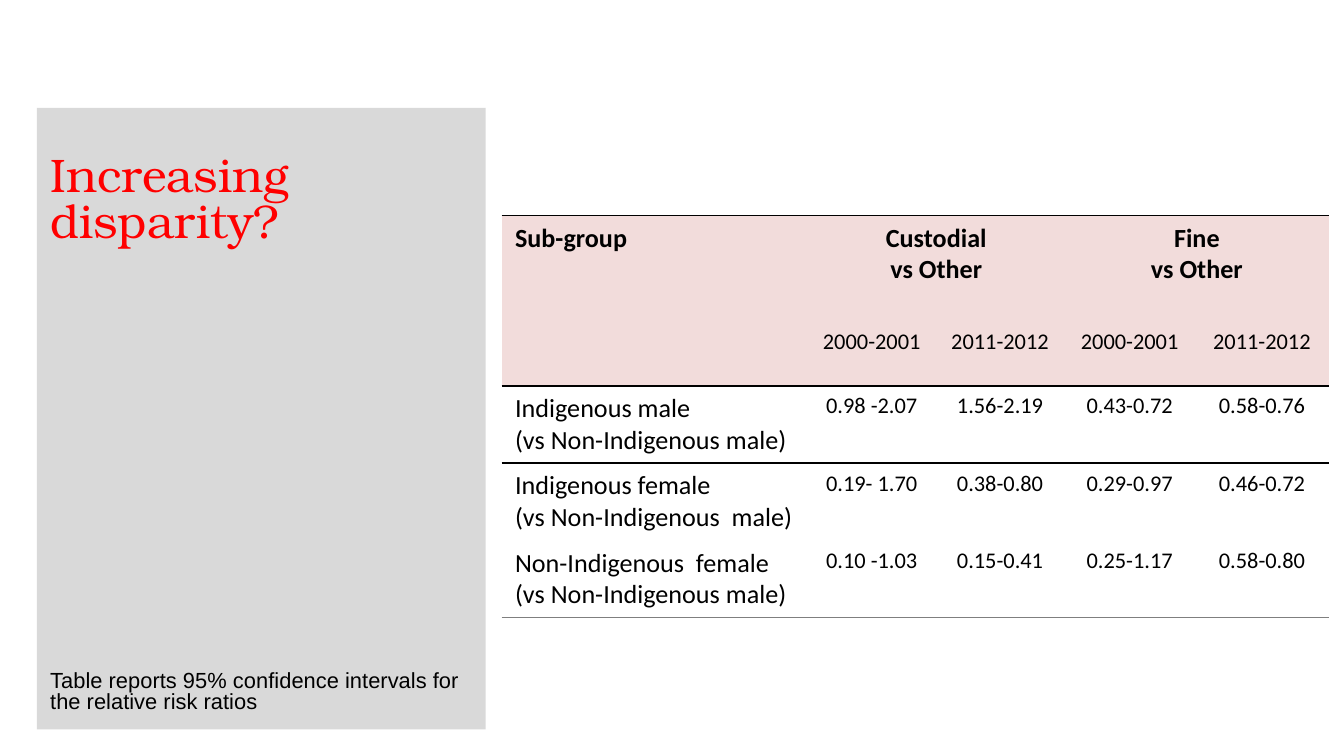
"""Build the slide on sentencing disparity between sub-groups."""
from lxml.etree import SubElement
from pptx import Presentation
from pptx.dml.color import RGBColor
from pptx.enum.shapes import MSO_SHAPE as Shape
from pptx.enum.text import MSO_ANCHOR as Anchor, PP_ALIGN as Align
from pptx.oxml.ns import qn
from pptx.util import Cm, Pt

BLACK = RGBColor(0x00, 0x00, 0x00)
RED = RGBColor(0xFF, 0x00, 0x00)
PANEL_GREY = RGBColor(0xD9, 0xD9, 0xD9)
RULE_GREY = RGBColor(0x7F, 0x7F, 0x7F)
PINK = RGBColor(0xF2, 0xDC, 0xDB)
NO_STYLE = "{2D5ABB26-0587-4C30-8999-92F81FD0307C}"


def write(paragraph, text, font="Calibri", size=12, color=BLACK, bold=False,
          align=Align.LEFT, spacing=1.0, after=0):
    paragraph.text = text
    paragraph.alignment = align
    paragraph.line_spacing = spacing
    paragraph.space_after = Cm(after)
    paragraph.font.name = font
    paragraph.font.size = Pt(size)
    paragraph.font.bold = bold
    paragraph.font.color.rgb = color


def rule(cell, side, color=BLACK, width=1.0):
    properties = cell._tc.get_or_add_tcPr()
    line = SubElement(properties, qn(f"a:{side}"), w=str(Pt(width)))
    fill = SubElement(line, qn("a:solidFill"))
    SubElement(fill, qn("a:srgbClr"), val=str(color))
    properties.insert(0, line)


prs = Presentation()
prs.slide_width, prs.slide_height = Cm(25.4), Cm(14.28)
slide = prs.slides.add_slide(prs.slide_layouts[6])

panel = slide.shapes.add_shape(Shape.RECTANGLE, Cm(0.7), Cm(2.04), Cm(8.48), Cm(11.74))
panel.shadow.inherit = False
panel.fill.solid()
panel.fill.fore_color.rgb = PANEL_GREY
panel.line.fill.background()
frame = panel.text_frame
frame.word_wrap = True
frame.vertical_anchor = Anchor.TOP
frame.margin_left, frame.margin_top = Cm(0.25), Cm(0.92)
frame.margin_right = frame.margin_bottom = 0
write(frame.paragraphs[0], "Increasing disparity?", font="TeX Gyre Bonum", size=25.2,
      color=RED, spacing=0.8, after=8.03)
write(frame.add_paragraph(),
      "Table reports 95% confidence intervals for the relative risk ratios",
      font="Arial", size=11.7, spacing=0.8)

rows = [
    ["Sub-group", "Custodial\nvs Other", "", "Fine\nvs Other", ""],
    ["", "2000-2001", "2011-2012", "2000-2001", "2011-2012"],
    ["Indigenous male\n(vs Non-Indigenous male)",
     "0.98 -2.07", "1.56-2.19", "0.43-0.72", "0.58-0.76"],
    ["Indigenous female\n(vs Non-Indigenous  male)",
     "0.19- 1.70", "0.38-0.80", "0.29-0.97", "0.46-0.72"],
    ["Non-Indigenous  female\n(vs Non-Indigenous male)",
     "0.10 -1.03", "0.15-0.41", "0.25-1.17", "0.58-0.80"],
]
widths = [5.79, 2.41, 2.44, 2.46, 2.54]
heights = [2.0, 1.22, 1.46, 1.46, 1.46]
rules = {0: ("lnT", BLACK, 1), 1: ("lnB", BLACK, 1), 2: ("lnB", BLACK, 1),
         4: ("lnB", RULE_GREY, 0.5)}

table = slide.shapes.add_table(len(rows), len(widths), Cm(9.48), Cm(4.07),
                               Cm(sum(widths)), Cm(sum(heights))).table
table.first_row = table.horz_banding = False
table._tbl.tblPr.find(qn("a:tableStyleId")).text = NO_STYLE
for column, width in zip(table.columns, widths):
    column.width = Cm(width)
for row, height in zip(table.rows, heights):
    row.height = Cm(height)
for first in (1, 3):
    table.cell(0, first).merge(table.cell(0, first + 1))

for r, texts in enumerate(rows):
    for c, text in enumerate(texts):
        cell = table.cell(r, c)
        if r < 2:
            cell.fill.solid()
            cell.fill.fore_color.rgb = PINK
        else:
            cell.fill.background()
        if r in rules:
            rule(cell, *rules[r])
        for i, line in enumerate(text.split("\n")):
            paragraph = cell.text_frame.add_paragraph() if i else cell.text_frame.paragraphs[0]
            write(paragraph, line, size=14 if r == 0 or c == 0 else 12, bold=r == 0,
                  align=Align.CENTER if c else Align.LEFT)

prs.save("out.pptx")
